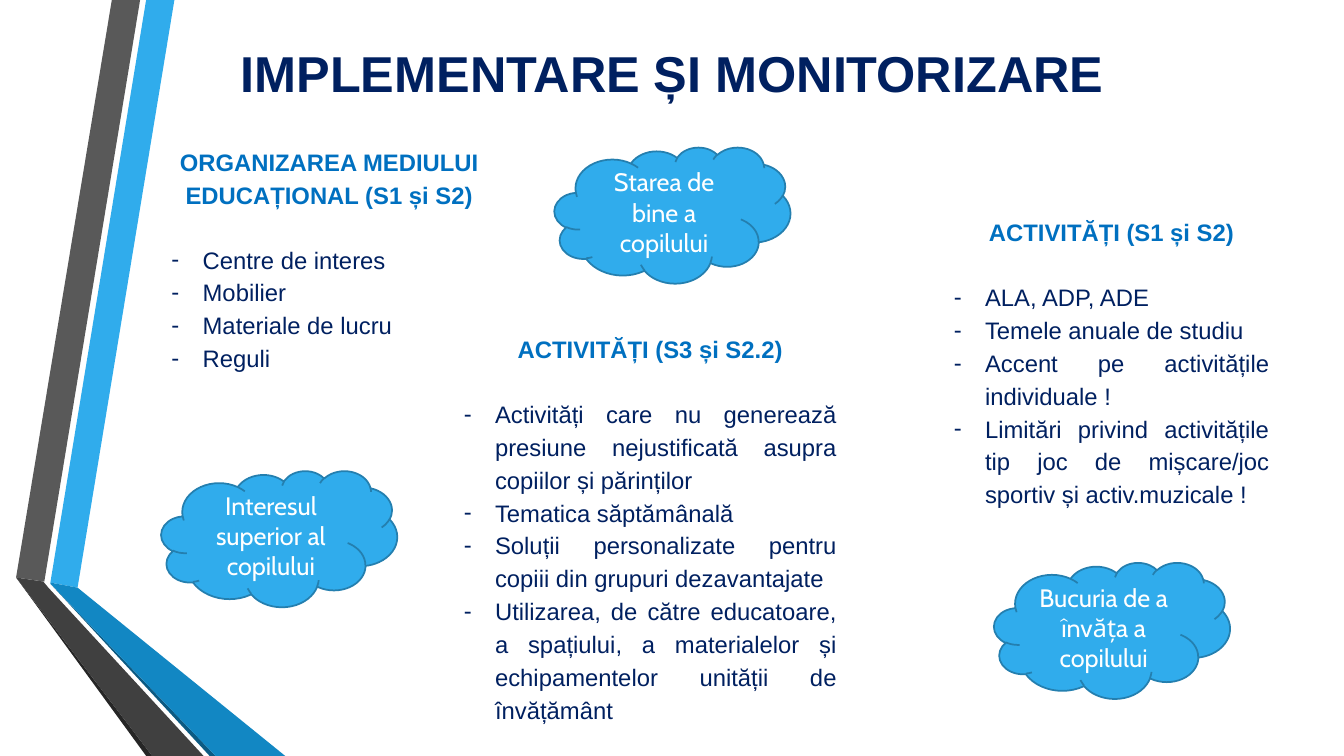
from lxml import etree
from pptx import Presentation
from pptx.dml.color import RGBColor
from pptx.enum.shapes import MSO_SHAPE
from pptx.enum.text import MSO_ANCHOR, MSO_AUTO_SIZE, PP_ALIGN
from pptx.oxml.ns import qn
from pptx.util import Inches, Pt

CLOUD = MSO_SHAPE.CLOUD
TOP, MIDDLE = MSO_ANCHOR.TOP, MSO_ANCHOR.MIDDLE
CENTER, JUSTIFY = PP_ALIGN.CENTER, PP_ALIGN.JUSTIFY
NO_FIT, GROW = MSO_AUTO_SIZE.NONE, MSO_AUTO_SIZE.SHAPE_TO_FIT_TEXT

NAVY = RGBColor(0x00, 0x20, 0x60)
BLUE = RGBColor(0x00, 0x70, 0xC0)
SKY = RGBColor(0x30, 0xAC, 0xEC)
SKY_EDGE = RGBColor(0x24, 0x7F, 0xAF)
OCEAN = RGBColor(0x12, 0x87, 0xC3)
DEEP_OCEAN = RGBColor(0x0C, 0x5A, 0x82)
GREY = RGBColor(0x59, 0x59, 0x59)
DARK_GREY = RGBColor(0x40, 0x40, 0x40)
CHARCOAL = RGBColor(0x26, 0x26, 0x26)
WHITE = RGBColor(0xFF, 0xFF, 0xFF)

COMPARISON_LAYOUT = 4
INDENT = Inches(0.31)

RIBBONS = [
    (SKY, [(0.5, 5.78), (0.77, 5.83), (1.73, 0), (1.45, 0)]),
    (GREY, [(1.39, 0), (1.11, 0), (0.16, 5.73), (0.44, 5.77)]),
    (CHARCOAL, [(0.16, 5.73), (1.45, 7.5), (1.51, 7.5)]),
    (DEEP_OCEAN, [(0.5, 5.79), (2.08, 7.5), (2.14, 7.5)]),
    (OCEAN, [(0.5, 5.79), (2.14, 7.5), (2.83, 7.5), (0.77, 5.83), (0.5, 5.78)]),
    (DARK_GREY, [(2.02, 7.5), (0.48, 5.83), (0.43, 5.77), (0.16, 5.73), (1.51, 7.5)]),
]

LISTS = [
    ((1.6, 1.37, 3.33, 2.71), "ORGANIZAREA MEDIULUI EDUCAȚIONAL (S1 și S2)", [
        "Centre de interes",
        "Mobilier",
        "Materiale de lucru",
        "Reguli",
    ]),
    ((9.36, 2.07, 3.33, 3.36), "ACTIVITĂȚI (S1 și S2)", [
        "ALA, ADP, ADE",
        "Temele anuale de studiu",
        "Accent pe activitățile individuale !",
        "Limitări privind activitățile tip joc de mișcare/joc sportiv și activ.muzicale !",
    ]),
    ((4.5, 3.23, 3.9, 4.35), "ACTIVITĂȚI (S3 și S2.2)", [
        "Activități care nu generează presiune nejustificată asupra copiilor și părinților",
        "Tematica săptămânală",
        "Soluții personalizate pentru copiii din grupuri dezavantajate",
        "Utilizarea, de către educatoare, a spațiului, a materialelor și "
        "echipamentelor unității de învățământ",
    ]),
]

CLOUDS = [
    (1.6, 4.67, "Interesul superior al copilului"),
    (5.5, 1.46, "Starea de bine a copilului"),
    (9.86, 5.58, "Bucuria de a învăța a copilului"),
]


class SlideBuilder:
    text_font = "Arial"
    cloud_font = "Cabin"
    title_size = Pt(36)
    list_size = Pt(17)
    cloud_size = Pt(18)

    def __init__(self, page):
        self.page = page
        self.bodies = [holder for holder in page.placeholders
                       if holder.placeholder_format.idx > 0]

    def place(self, shape, bounds):
        shape.left, shape.top, shape.width, shape.height = map(Inches, bounds)

    def format(self, para, font, size, color, bold=False, align=CENTER):
        para.alignment = align
        for span in para.runs:
            span.font.name = font
            span.font.size = size
            span.font.bold = bold
            span.font.color.rgb = color

    def ribbons(self, ribbons):
        group = self.page.shapes.add_group_shape()
        for color, points in ribbons:
            start, *rest = [(Inches(x), Inches(y)) for x, y in points]
            outline = group.shapes.build_freeform(*start)
            outline.add_line_segments(rest, close=True)
            ribbon = outline.convert_to_shape()
            ribbon.shadow.inherit = False
            ribbon.fill.solid()
            ribbon.fill.fore_color.rgb = color
            ribbon.line.fill.background()
        group.element.getparent().insert(2, group.element)

    def title(self, text, bounds):
        box = self.page.shapes.title
        self.place(box, bounds)
        frame = box.text_frame
        frame.text = text
        frame.auto_size = NO_FIT
        frame.vertical_anchor = TOP
        frame.margin_top = Inches(0.04)
        self.format(frame.paragraphs[0], self.text_font, self.title_size, NAVY, True)

    def bullet(self, para, mark=None):
        indent = INDENT if mark else 0
        properties = para._p.get_or_add_pPr()
        properties.set("marL", str(indent))
        properties.set("indent", str(-indent))
        if mark:
            etree.SubElement(properties, qn("a:buChar")).set("char", mark)
        else:
            etree.SubElement(properties, qn("a:buNone"))

    def list(self, bounds, heading, items):
        box = self.bodies.pop(0)
        self.place(box, bounds)
        frame = box.text_frame
        frame.text = "\n".join([heading, *items])
        frame.word_wrap = True
        frame.auto_size = GROW
        frame.vertical_anchor = TOP
        for para in frame.paragraphs:
            para.line_spacing = 1.15
            para.space_before = para.space_after = Pt(0)
        first, *rest = frame.paragraphs
        first.space_after = Pt(23)
        self.format(first, self.text_font, self.list_size, BLUE, True)
        self.bullet(first)
        for para in rest:
            self.format(para, self.text_font, self.list_size, NAVY, align=JUSTIFY)
            self.bullet(para, "-")

    def cloud(self, left, top, text):
        cloud = self.page.shapes.add_shape(
            CLOUD, Inches(left), Inches(top), Inches(2.34), Inches(1.35))
        cloud.shadow.inherit = False
        cloud.fill.solid()
        cloud.fill.fore_color.rgb = SKY
        cloud.line.color.rgb = SKY_EDGE
        cloud.line.width = Pt(1.25)
        frame = cloud.text_frame
        frame.text = text
        frame.word_wrap = True
        frame.vertical_anchor = MIDDLE
        self.format(frame.paragraphs[0], self.cloud_font, self.cloud_size, WHITE)

    def remove_unused(self):
        for holder in self.bodies:
            holder.element.getparent().remove(holder.element)


def main():
    deck = Presentation()
    deck.slide_width = Inches(13.33)
    deck.slide_height = Inches(7.5)
    builder = SlideBuilder(deck.slides.add_slide(deck.slide_layouts[COMPARISON_LAYOUT]))
    builder.ribbons(RIBBONS)
    builder.title("IMPLEMENTARE ȘI MONITORIZARE", (0.64, 0.38, 12.06, 1.16))
    for bounds, heading, items in LISTS:
        builder.list(bounds, heading, items)
    for left, top, text in CLOUDS:
        builder.cloud(left, top, text)
    builder.remove_unused()
    deck.save("out.pptx")


if __name__ == "__main__":
    main()
